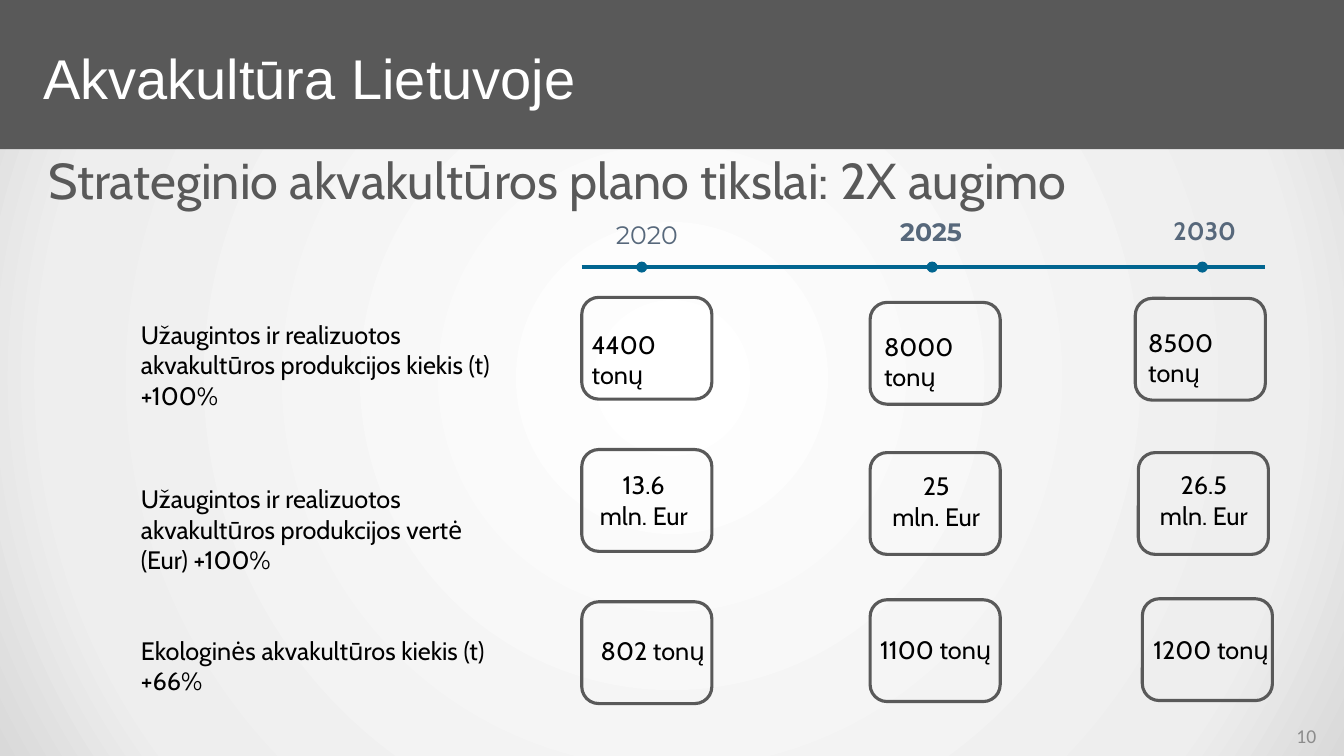
"""Builds a slide with the strategic growth goals of Lithuanian aquaculture."""
from dataclasses import dataclass

from pptx import Presentation
from pptx import util as u
from pptx.dml.color import RGBColor
from pptx.enum import shapes, text
from pptx.oxml import parse_xml
from pptx.oxml.ns import nsdecls
from pptx.oxml.xmlchemy import OxmlElement


@dataclass(frozen=True)
class Theme:
    """Colours, fonts and type sizes of the slide."""
    band: str = "595959"
    accent: str = "016590"
    year: str = "57687B"
    ink: str = "000000"
    light: str = "FFFFFF"
    muted: str = "8C8C8C"
    backdrop: tuple = ((0, "FFFFFF"), (81, "EEEEEE"), (100, "D9D9D9"))
    title_font: str = "Arial"
    body_font: str = "Cabin"
    year_font: str = "Montserrat"
    number_font: str = "Calibri"
    title_size: int = 40
    heading_size: int = 36
    body_size: int = 18
    number_size: int = 14


THEME = Theme()
WIDTH, HEIGHT = 13.33, 7.5
COLUMNS = (5.77, 8.63, 11.26)
ROWS = (2.95, 4.46, 5.95)
CARD = (1.29, 1.01)
LABEL_LEFT, LABEL_WIDTH = 1.3, 3.66
LINE_Y, DOT = 2.65, 0.11

YEARS = (
    ("2020", 6.01, 2.13, 1.31, THEME.year_font, False, 6.31),
    ("2025", 8.83, 2.1, 1.07, THEME.year_font, True, 9.19),
    ("2030", 11.54, 2.09, 0.88, THEME.body_font, True, 11.87),
)
LABELS = (
    ("Užaugintos ir realizuotos akvakultūros produkcijos kiekis (t) +100%", 0.17),
    ("Užaugintos ir realizuotos akvakultūros produkcijos vertė (Eur) +100%", 0.29),
    ("Ekologinės akvakultūros kiekis (t)+66%", 0.3),
)
# Each goal: text, card shift (x, y), text shift (x, y), text width.
GOALS = (
    (("4400 tonų", (0, 0), (0, 0.27), 1.34),
     ("8000 tonų", (0, 0.05), (0.04, 0.29), 1.4),
     ("8500 tonų", (0, 0.01), (0.03, 0.25), 1.4)),
    (("13.6\nmln. Eur", (0, 0), (-0.15, 0.15), 1.53),
     ("25\nmln. Eur", (0, 0.03), (-0.04, 0.16), 1.39),
     ("26.5\nmln. Eur", (0.03, 0.03), (-0.06, 0.15), 1.48)),
    (("802 tonų", (0, 0.02), (0.09, 0.3), 1.33),
     ("1100 tonų", (0, 0), (0, 0.29), 2.01),
     ("1200 tonų", (0.07, -0.01), (0.08, 0.29), 1.71)),
)


def inches(*lengths):
    """Converts lengths in inches to slide units."""
    return [u.Inches(length) for length in lengths]


def style(frame, size, font, colour, bold=False, align=text.PP_ALIGN.LEFT):
    """Formats every paragraph of a text frame."""
    for paragraph in frame.paragraphs:
        paragraph.alignment = align
        paragraph.font.size = u.Pt(size)
        paragraph.font.name = font
        paragraph.font.bold = bold
        paragraph.font.color.rgb = RGBColor.from_string(colour)


def add_text(slide, wording, box, size=THEME.body_size, font=THEME.body_font,
             colour=THEME.ink, **options):
    """Adds a wrapping text box and returns its frame."""
    frame = slide.shapes.add_textbox(*inches(*box)).text_frame
    frame.word_wrap = True
    frame.text = wording
    style(frame, size, font, colour, **options)
    return frame


def add_block(slide, kind, box, fill=None, outline=None):
    """Adds a preset shape with a plain fill or an outline."""
    block = slide.shapes.add_shape(kind, *inches(*box))
    block.shadow.inherit = False
    if fill:
        block.fill.solid()
        block.fill.fore_color.rgb = RGBColor.from_string(fill)
    else:
        block.fill.background()
    if outline:
        block.line.color.rgb = RGBColor.from_string(outline)
        block.line.width = u.Pt(2.25)
    else:
        block.line.fill.background()


def set_backdrop(slide):
    """Gives the slide a round gradient from the centre."""
    stops = "".join(f'<a:gs pos="{share * 1000}"><a:srgbClr val="{colour}"/></a:gs>'
                    for share, colour in THEME.backdrop)
    slide.element.cSld.insert(0, parse_xml(
        f'<p:bg {nsdecls("p", "a")}><p:bgPr><a:gradFill rotWithShape="1">'
        f'<a:gsLst>{stops}</a:gsLst><a:path path="circle">'
        '<a:fillToRect l="50000" t="50000" r="50000" b="50000"/></a:path>'
        '</a:gradFill><a:effectLst/></p:bgPr></p:bg>'))


def add_header(slide):
    """Adds the dark band, the title and the heading below it."""
    add_block(slide, shapes.MSO_SHAPE.RECTANGLE, (0, 0, WIDTH, 1.48), THEME.band)
    title = slide.shapes.title
    slide.shapes.element.append(title.element)
    title.left, title.top, title.width, title.height = inches(0.33, 0.33, 11.82, 0.87)
    frame = title.text_frame
    frame.text = "Akvakultūra Lietuvoje"
    frame.auto_size = text.MSO_AUTO_SIZE.NONE
    frame.vertical_anchor = text.MSO_ANCHOR.MIDDLE
    style(frame, THEME.title_size, THEME.title_font, THEME.light)

    heading = add_text(slide, "Strateginio akvakultūros plano tikslai: 2X augimo",
                       (0.2, 1.23, 12.34, 0.9), THEME.heading_size, colour=THEME.band)
    heading.margin_left, heading.margin_top = inches(0.28, 0.32)
    heading.paragraphs[0].line_spacing = 0.9


def add_timeline(slide):
    """Draws the time axis with a dot and a label for each year."""
    axis = slide.shapes.add_connector(
        shapes.MSO_CONNECTOR.STRAIGHT,
        *inches(COLUMNS[0], LINE_Y, COLUMNS[-1] + CARD[0], LINE_Y))
    axis.line.color.rgb = RGBColor.from_string(THEME.accent)
    axis.line.width = u.Pt(3)
    axis.element.spPr.append(OxmlElement("a:effectLst"))
    for year, left, top, width, font, bold, dot_left in YEARS:
        add_block(slide, shapes.MSO_SHAPE.OVAL,
                  (dot_left, LINE_Y - DOT / 2, DOT, DOT), THEME.accent)
        add_text(slide, year, (left, top, width, 0.4), font=font,
                 colour=THEME.year, bold=bold)


def add_goal(slide, left, top, goal):
    """Adds one goal value with its rounded card."""
    wording, (card_x, card_y), (text_x, text_y), width = goal
    two_lines = "\n" in wording
    add_text(slide, wording,
             (left + text_x, top + text_y, width, 0.71 if two_lines else 0.4),
             align=text.PP_ALIGN.CENTER if two_lines else text.PP_ALIGN.LEFT)
    add_block(slide, shapes.MSO_SHAPE.ROUNDED_RECTANGLE,
              (left + card_x, top + card_y, *CARD), outline=THEME.band)


def main():
    """Builds and saves the slide."""
    deck = Presentation()
    deck.slide_width, deck.slide_height = inches(WIDTH, HEIGHT)
    slide = deck.slides.add_slide(deck.slide_layouts[5])
    set_backdrop(slide)
    add_header(slide)
    add_timeline(slide)
    for top, (label, shift), goals in zip(ROWS, LABELS, GOALS):
        add_text(slide, label, (LABEL_LEFT, top + shift, LABEL_WIDTH, CARD[1]))
        for left, goal in zip(COLUMNS, goals):
            add_goal(slide, left, top, goal)
    number = add_text(slide, "10", (12.76, 7.1, 0.57, 0.4), THEME.number_size,
                      THEME.number_font, THEME.muted)
    number.vertical_anchor = text.MSO_ANCHOR.MIDDLE
    deck.save("out.pptx")


if __name__ == "__main__":
    main()
